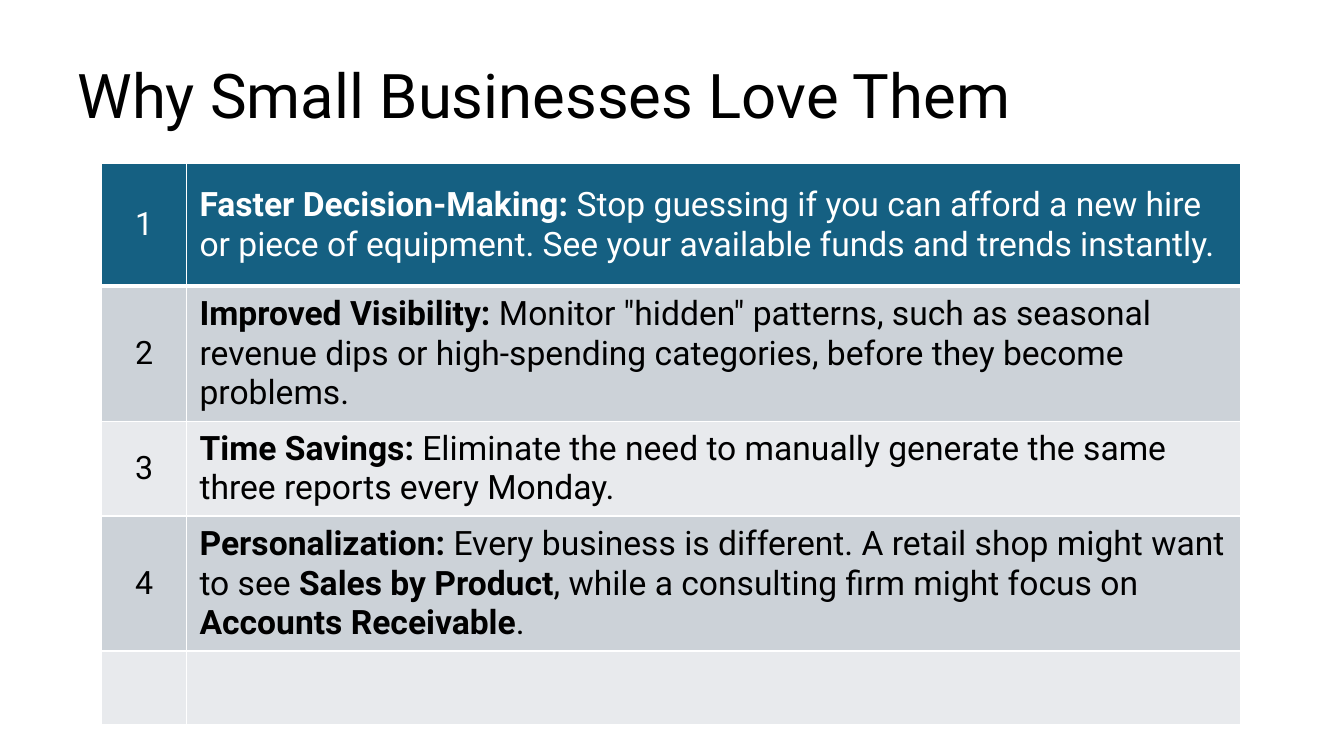
from lxml import etree
from pptx import Presentation
from pptx.dml.color import RGBColor
from pptx.enum.text import MSO_ANCHOR, PP_ALIGN
from pptx.oxml.ns import qn
from pptx.util import Inches, Pt

TOP, MIDDLE = MSO_ANCHOR.TOP, MSO_ANCHOR.MIDDLE
LEFT, CENTER = PP_ALIGN.LEFT, PP_ALIGN.CENTER
FONT = "Roboto"
BLACK, WHITE = "000000", "FFFFFF"
HEADER_FILL, BAND_FILLS = "156082", ("E8EAED", "CCD2D8")
NUMBER_WIDTH = 0.84
ROW_HEIGHTS = (1.22, 1.3, 0.92, 1.3, 0.73)
REASONS = (
    "**Faster Decision-Making:** Stop guessing if you can afford a new hire or piece of "
    "equipment. See your available funds and trends instantly.",
    '**Improved Visibility:** Monitor "hidden" patterns, such as seasonal revenue dips or '
    "high-spending categories, before they become problems.",
    "**Time Savings:** Eliminate the need to manually generate the same three reports "
    "every Monday.",
    "**Personalization:** Every business is different. A retail shop might want to see "
    "**Sales by Product**, while a consulting firm might focus on **Accounts Receivable**.",
)


def rgb(value):
    """Return the colour for a hex string."""
    return RGBColor.from_string(value)


def write(paragraph, text, size, color, align=LEFT):
    """Write text into a paragraph, with **marked** stretches in bold."""
    paragraph.alignment = align
    paragraph.font.name = FONT
    paragraph.font.size = Pt(size)
    paragraph.font.color.rgb = rgb(color)
    for index, part in enumerate(text.split("**")):
        if part:
            run = paragraph.add_run()
            run.text = part
            run.font.bold = index % 2 == 1


def style_cell(cell, fill, bottom_width):
    """Give a cell its margins, white borders and fill."""
    cell.vertical_anchor = MIDDLE
    cell.margin_left = cell.margin_right = Inches(0.13)
    cell.margin_top = cell.margin_bottom = Inches(0.07)
    properties = cell._tc.get_or_add_tcPr()
    for side, width in (("L", 1), ("R", 1), ("T", 1), ("B", bottom_width)):
        border = etree.SubElement(properties, qn(f"a:ln{side}"), w=str(Pt(width)))
        solid = etree.SubElement(border, qn("a:solidFill"))
        etree.SubElement(solid, qn("a:srgbClr"), val=WHITE)
    cell.fill.solid()
    cell.fill.fore_color.rgb = rgb(fill)


def add_title(slide, left, top, width, height):
    """Place the slide title in the given box."""
    frame = slide.shapes.add_textbox(
        Inches(left), Inches(top), Inches(width), Inches(height)).text_frame
    frame.word_wrap = True
    frame.vertical_anchor = TOP
    title = frame.paragraphs[0]
    title.line_spacing = 0.9
    write(title, "Why Small Businesses Love Them", 44, BLACK)


def add_reasons(slide, left, top, width, height):
    """Place the numbered table of reasons, closed by an empty row."""
    table = slide.shapes.add_table(
        len(ROW_HEIGHTS), 2, Inches(left), Inches(top), Inches(width), Inches(height)).table
    table.horz_banding = False
    for column, column_width in zip(table.columns, (NUMBER_WIDTH, width - NUMBER_WIDTH)):
        column.width = Inches(column_width)
    for index, row_height in enumerate(ROW_HEIGHTS):
        row = table.rows[index]
        row.height = Inches(row_height)
        header = index == 0
        for cell in row.cells:
            style_cell(cell, HEADER_FILL if header else BAND_FILLS[index % 2],
                       3 if header else 1)
        if index < len(REASONS):
            number, reason = row.cells
            color = WHITE if header else BLACK
            write(number.text_frame.paragraphs[0], str(index + 1), 23, color, CENTER)
            write(reason.text_frame.paragraphs[0], REASONS[index], 24, color)


def main():
    """Build the slide and save it."""
    presentation = Presentation()
    presentation.slide_width = Inches(13.33)
    presentation.slide_height = Inches(7.5)
    slide = presentation.slides.add_slide(presentation.slide_layouts[6])
    add_title(slide, 0.67, 0.6, 11.97, 1.24)
    add_reasons(slide, 1.01, 1.62, 11.29, sum(ROW_HEIGHTS))
    presentation.save("out.pptx")


if __name__ == "__main__":
    main()
